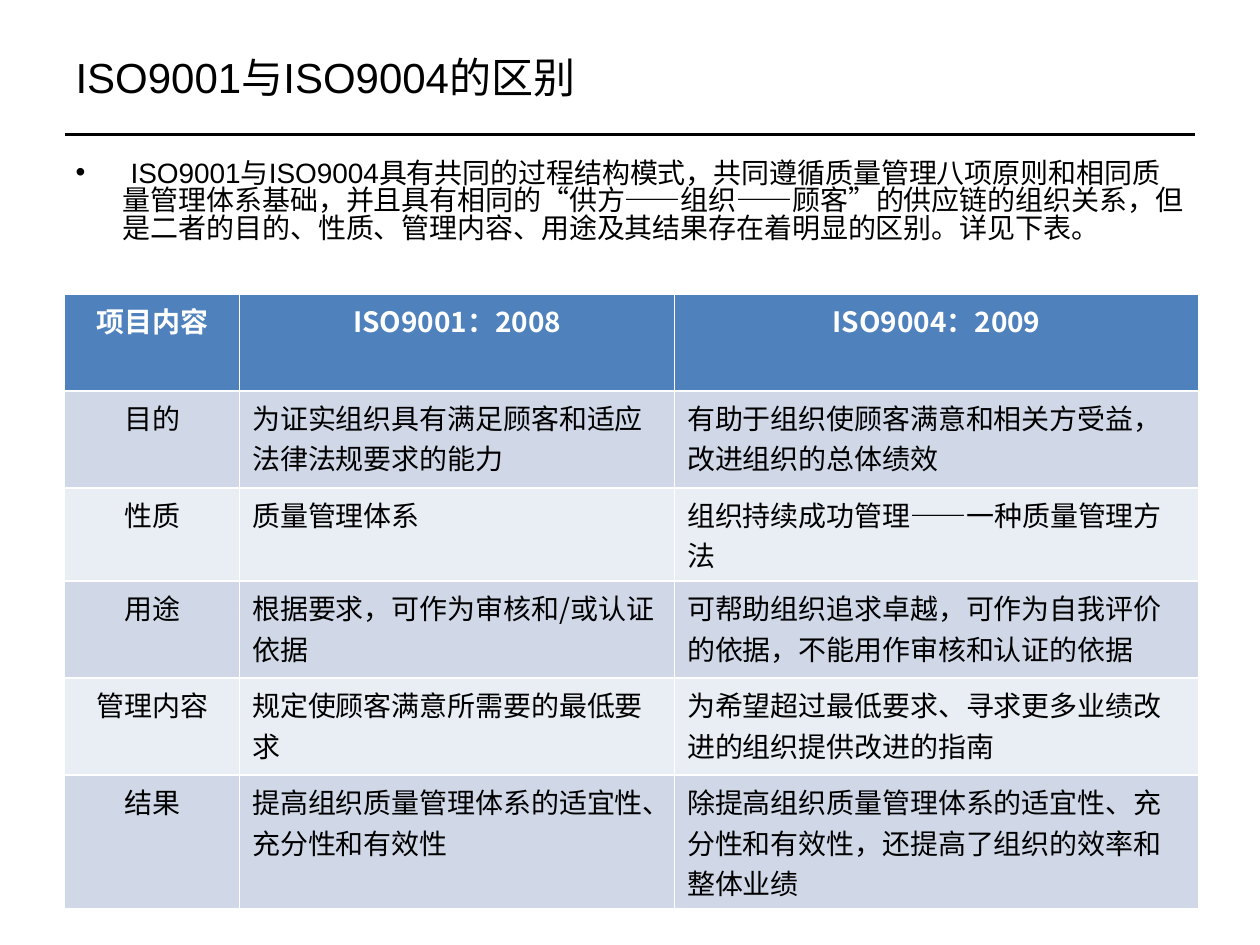
from pptx import Presentation
from pptx.dml.color import RGBColor
from pptx.enum.shapes import MSO_CONNECTOR
from pptx.enum.text import MSO_ANCHOR, MSO_AUTO_SIZE, PP_ALIGN
from pptx.oxml.ns import qn
from pptx.util import Pt

LEFT, CENTER = PP_ALIGN.LEFT, PP_ALIGN.CENTER
TOP, MIDDLE = MSO_ANCHOR.TOP, MSO_ANCHOR.MIDDLE
NO_FIT = MSO_AUTO_SIZE.NONE
STRAIGHT = MSO_CONNECTOR.STRAIGHT
CJK = "Noto Sans CJK SC"
COLORS = {"text": "000000", "header": "4F81BD", "header_text": "FFFFFF",
          "odd_row": "D0D8E8", "even_row": "E9EDF4"}


def color(name):
    return RGBColor.from_string(COLORS[name])


def add_span(para, text, size, font, ink="text", bold=False):
    span = para.add_run()
    span.text = text
    span.font.size = Pt(size)
    span.font.name = font
    span.font.bold = bold
    span.font.color.rgb = color(ink)
    properties = span.font._element
    latin = properties.find(qn("a:latin"))
    east_asian = properties.makeelement(qn("a:ea"), {"typeface": CJK})
    latin.addnext(east_asian)


deck = Presentation()
deck.slide_width, deck.slide_height = Pt(720), Pt(540)
page = deck.slides.add_slide(deck.slide_layouts[1])

rule = page.shapes.add_connector(STRAIGHT, Pt(37), Pt(77), Pt(683), Pt(77))
rule.line.color.rgb = color("text")
rule.line.width = Pt(1.5)
rule_properties = rule._element.spPr
rule_properties.append(rule_properties.makeelement(qn("a:effectLst"), {}))

title, body = page.shapes.title, page.placeholders[1]
for box, top, height, anchor in ((title, 21.6, 44, MIDDLE), (body, 88.5, 79, TOP)):
    box.left, box.top, box.width, box.height = Pt(36), Pt(top), Pt(648), Pt(height)
    box.text_frame.auto_size = NO_FIT
    box.text_frame.word_wrap = True
    box.text_frame.vertical_anchor = anchor
    box.text_frame.paragraphs[0].alignment = LEFT

add_span(title.text_frame.paragraphs[0], "ISO9001与ISO9004的区别", 24, "Arial")

para = body.text_frame.paragraphs[0]
para.space_before = Pt(0)
para.line_spacing = 0.82
indents = para._element.get_or_add_pPr()
indents.set("marL", str(Pt(27)))
indents.set("indent", str(-Pt(27)))
indents.append(indents.makeelement(qn("a:buChar"), {"char": "•"}))
add_span(para, " ISO9001与ISO9004具有共同的过程结构模式，共同遵循质量管理八项原则和相同质量管理体系基础，"
         "并且具有相同的“供方——组织——顾客”的供应链的组织关系，但是二者的目的、性质、管理内容、"
         "用途及其结果存在着明显的区别。详见下表。", 16, "Arial")

rows = [
    ("项目内容", "ISO9001：2008", "ISO9004：2009"),
    ("目的", "为证实组织具有满足顾客和适应法律法规要求的能力",
     "有助于组织使顾客满意和相关方受益，改进组织的总体绩效"),
    ("性质", "质量管理体系", "组织持续成功管理——一种质量管理方法"),
    ("用途", "根据要求，可作为审核和/或认证依据",
     "可帮助组织追求卓越，可作为自我评价的依据，不能用作审核和认证的依据"),
    ("管理内容", "规定使顾客满意所需要的最低要求",
     "为希望超过最低要求、寻求更多业绩改进的组织提供改进的指南"),
    ("结果", "提高组织质量管理体系的适宜性、充分性和有效性",
     "除提高组织质量管理体系的适宜性、充分性和有效性，还提高了组织的效率和整体业绩"),
]
widths = (100, 248.5, 299.5)
heights = (55.4, 55.4, 45.5, 55.4, 55.4, 65)
table = page.shapes.add_table(len(rows), len(widths), Pt(37), Pt(168),
                              Pt(sum(widths)), Pt(sum(heights))).table
for column, width in zip(table.columns, widths):
    column.width = Pt(width)
for row, height in zip(table.rows, heights):
    row.height = Pt(height)

for r, texts in enumerate(rows):
    header = r == 0
    fill = "header" if header else "odd_row" if r % 2 else "even_row"
    for c, text in enumerate(texts):
        cell = table.cell(r, c)
        cell.fill.solid()
        cell.fill.fore_color.rgb = color(fill)
        para = cell.text_frame.paragraphs[0]
        para.alignment = CENTER if header or c == 0 else LEFT
        font = CJK if c and (header or "/" in text) else "Calibri"
        before, dash, after = text.partition("——")
        for part, face in ((before, font), (dash, "Arial"), (after, font)):
            if part:
                add_span(para, part, 16, face, "header_text" if header else "text", header)

deck.save("out.pptx")
